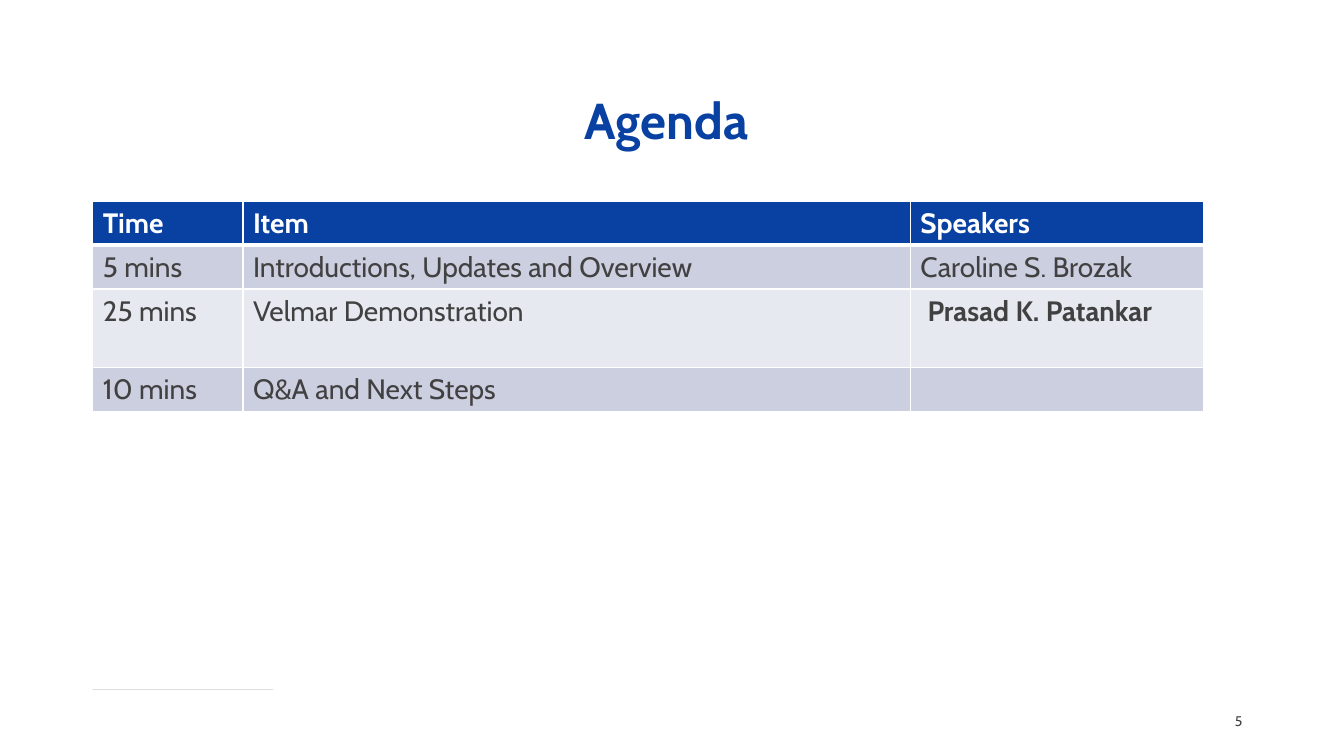
from lxml import etree
from pptx import Presentation
from pptx import util as u
from pptx.dml.color import RGBColor
from pptx.enum import shapes, text
from pptx.oxml import ns

PX = 9144
FONT = "Cabin"
WHITE = RGBColor(0xFF, 0xFF, 0xFF)
BLUE = RGBColor(0x08, 0x41, 0xA2)
GREY = RGBColor(0x41, 0x41, 0x42)
BAND_DARK = RGBColor(0xCC, 0xCF, 0xE0)
BAND_LIGHT = RGBColor(0xE7, 0xE9, 0xF0)

COLUMNS = [149, 662, 291]
ROW_HEIGHTS = [43, 43, 78, 43]
AGENDA = [
    ["Time", "Item", "Speakers"],
    ["5 mins", "Introductions, Updates and Overview", "Caroline S. Brozak"],
    ["25 mins", "Velmar Demonstration", "Prasad K. Patankar"],
    ["10 mins", "Q&A and Next Steps", ""],
]


def px(n):
    """Turn a length in px into EMU."""
    return u.Emu(n * PX)


def write(tf, content, size=20, color=GREY, bold=False,
          align=text.PP_ALIGN.LEFT, spacing=None):
    """Write one formatted paragraph into a text frame."""
    p = tf.paragraphs[0]
    p.alignment = align
    if spacing:
        p.line_spacing = spacing
    p.font.size = u.Pt(size)
    if content:
        r = p.add_run()
        r.text = content
        r.font.name = FONT
        r.font.size = u.Pt(size)
        r.font.bold = bold
        r.font.color.rgb = color


def add_text(s, content, left, top, width, height, **style):
    """Add a vertically centred text box."""
    tf = s.shapes.add_textbox(px(left), px(top), px(width), px(height)).text_frame
    tf.word_wrap = True
    tf.vertical_anchor = text.MSO_ANCHOR.MIDDLE
    write(tf, content, **style)


def add_rule(s, left, top, width):
    """Add the thin half-transparent footer line."""
    line = s.shapes.add_connector(shapes.MSO_CONNECTOR.STRAIGHT, px(left), px(top),
                                  px(left + width), px(top))
    line.line.color.rgb = GREY
    line.line.width = u.Pt(0.25)
    color = line.line._ln.find(".//" + ns.qn("a:srgbClr"))
    etree.SubElement(color, ns.qn("a:alpha"), val="50000")
    etree.SubElement(line._element.spPr, ns.qn("a:effectLst"))


def set_borders(cell, bottom):
    """Give a cell white borders, with its own bottom width in points."""
    pr = cell._tc.get_or_add_tcPr()
    widths = {"a:lnL": 1, "a:lnR": 1, "a:lnT": 1, "a:lnB": bottom}
    for i, (tag, width) in enumerate(widths.items()):
        ln = etree.Element(ns.qn(tag), w=str(u.Pt(width)))
        fill = etree.SubElement(ln, ns.qn("a:solidFill"))
        etree.SubElement(fill, ns.qn("a:srgbClr"), val=str(WHITE))
        pr.insert(i, ln)


def add_agenda(s, left, top):
    """Add the agenda table with a blue header and banded rows."""
    table = s.shapes.add_table(len(AGENDA), len(COLUMNS), px(left), px(top),
                               px(sum(COLUMNS)), px(sum(ROW_HEIGHTS))).table
    for column, width in zip(table.columns, COLUMNS):
        column.width = px(width)
    for i, (row, height) in enumerate(zip(table.rows, ROW_HEIGHTS)):
        row.height = px(height)
        header = i == 0
        band = BAND_DARK if i % 2 else BAND_LIGHT
        for cell, content in zip(row.cells, AGENDA[i]):
            cell.fill.solid()
            cell.fill.fore_color.rgb = BLUE if header else band
            set_borders(cell, 3 if header else 1)
            write(cell.text_frame, content, bold=header,
                  color=WHITE if header else GREY)
    demo_speaker = table.cell(2, 2)
    demo_speaker.margin_left = px(17)
    demo_speaker.text_frame.paragraphs[0].runs[0].font.bold = True


def main():
    """Build the agenda slide and save it."""
    prs = Presentation()
    prs.slide_width, prs.slide_height = px(1333), px(750)
    s = prs.slides.add_slide(prs.slide_layouts[6])
    add_rule(s, 92, 684, 179)
    add_text(s, "5", 942, 695, 300, 40, size=10, align=text.PP_ALIGN.RIGHT)
    add_text(s, "Agenda", 86, 40, 1150, 145, size=36, color=BLUE, bold=True,
             align=text.PP_ALIGN.CENTER, spacing=1.2)
    add_agenda(s, 92, 200)
    prs.save("out.pptx")


if __name__ == "__main__":
    main()
